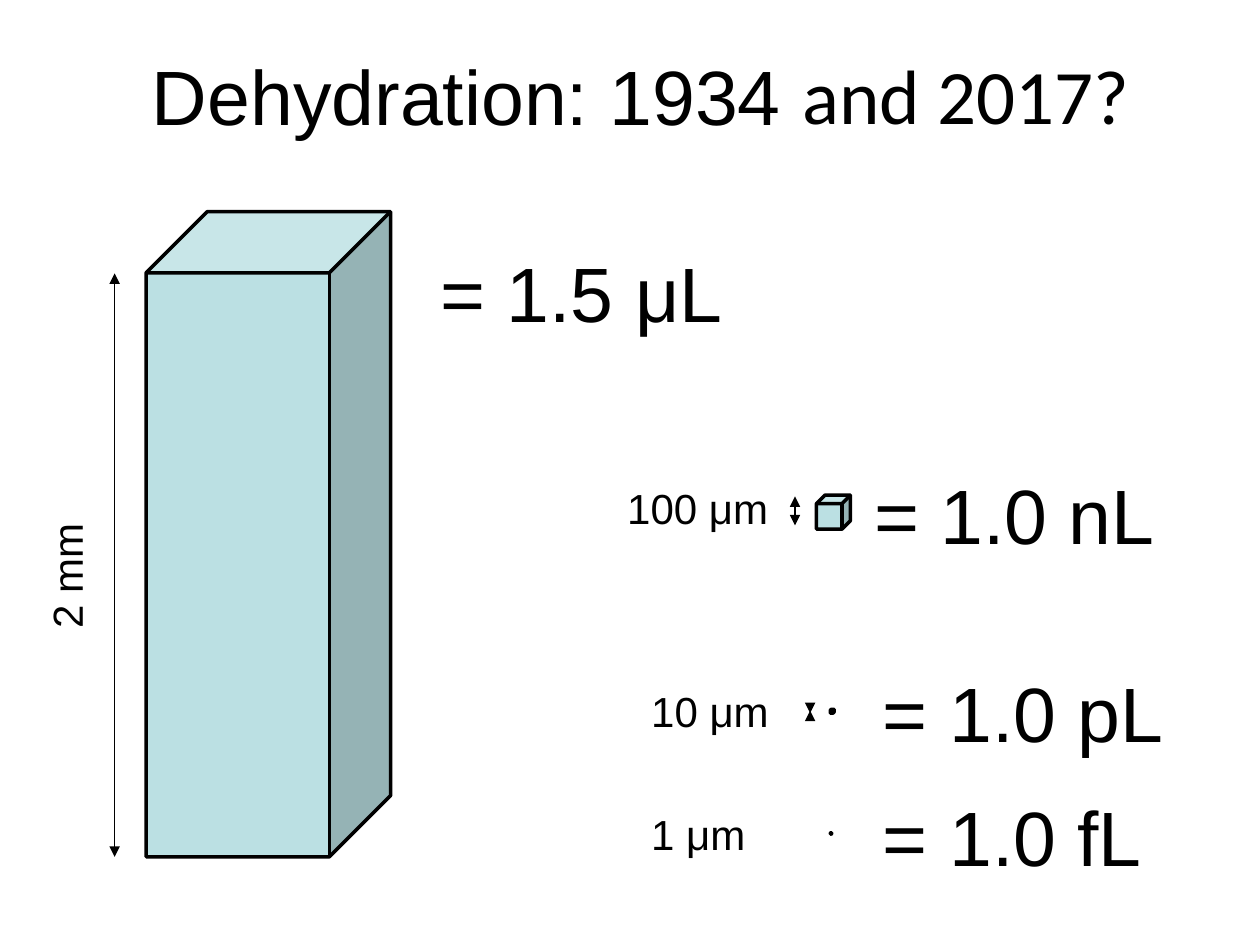
from lxml.etree import SubElement
from pptx import Presentation
from pptx.dml.color import RGBColor
from pptx.enum.shapes import MSO_CONNECTOR, MSO_SHAPE
from pptx.enum.text import MSO_ANCHOR, MSO_AUTO_SIZE, PP_ALIGN
from pptx.oxml.ns import qn
from pptx.util import Inches, Pt

BLACK = RGBColor(0x00, 0x00, 0x00)
PALE_TEAL = RGBColor(0xBB, 0xE0, 0xE3)
LARGE, SMALL = 44, 24

# Titles: text, box, format
TITLES = [
    ("Dehydration: 1934", (-0.01, 0.13, 7.43, 1.25),
     dict(align=PP_ALIGN.CENTER, anchor=MSO_ANCHOR.MIDDLE, wrap=True)),
    ("and 2017?", (6.27, 0.33, 2.82, 0.84), dict(font="Calibri")),
]

# Each volume: cube box, edge label and its box, volume label and its box,
# and the edge arrow as x, bottom, top (None where the edge is too short)
VOLUMES = [
    dict(cube=(1.16, 1.68, 1.94, 5.12), arrow=(0.91, 6.8, 2.17),
         edge=("2 mm", (0.01, 4.31, 1.04, 0.51)), turn=270,
         volume=(" = 1.5 μL", (3.23, 1.9, 2.64, 0.84))),
    dict(cube=(6.48, 3.93, 0.27, 0.27), arrow=(6.31, 4.17, 3.94),
         edge=("100 μm", (4.88, 3.78, 1.33, 0.51)), turn=0,
         volume=(" = 1.0 nL", (6.67, 3.66, 2.62, 0.84))),
    dict(cube=(6.59, 5.63, 0.03, 0.03), arrow=(6.43, 5.66, 5.64),
         edge=("10 μm", (5.07, 5.39, 1.15, 0.5)), turn=0,
         volume=(" = 1.0 pL", (6.74, 5.23, 2.62, 0.84))),
    dict(cube=(6.59, 6.61, 0.01, 0.01), arrow=None,
         edge=("1 μm", (5.07, 6.37, 0.96, 0.5)), turn=0,
         volume=(" = 1.0 fL", (6.74, 6.22, 2.45, 0.84))),
]


def add_text(slide, text, box, size=LARGE, font="Arial", align=PP_ALIGN.LEFT,
             anchor=MSO_ANCHOR.TOP, wrap=False, turn=0):
    label = slide.shapes.add_textbox(*map(Inches, box))
    label.rotation = turn
    frame = label.text_frame
    frame.word_wrap = wrap
    frame.auto_size = MSO_AUTO_SIZE.NONE if wrap else MSO_AUTO_SIZE.SHAPE_TO_FIT_TEXT
    frame.vertical_anchor = anchor
    paragraph = frame.paragraphs[0]
    paragraph.alignment = align
    run = paragraph.add_run()
    run.text = text
    run.font.size = Pt(size)
    run.font.name = font
    run.font.color.rgb = BLACK


def add_cube(slide, box):
    cube = slide.shapes.add_shape(MSO_SHAPE.CUBE, *map(Inches, box))
    cube.shadow.inherit = False
    cube.fill.solid()
    cube.fill.fore_color.rgb = PALE_TEAL
    cube.line.color.rgb = BLACK
    cube.line.width = Pt(2)


def add_edge_arrow(slide, x, bottom, top):
    """Draw a vertical line with an arrowhead at both ends."""
    arrow = slide.shapes.add_connector(
        MSO_CONNECTOR.STRAIGHT, Inches(x), Inches(bottom), Inches(x), Inches(top))
    arrow.line.color.rgb = BLACK
    arrow.line.width = Pt(0.75)
    outline = arrow.line._get_or_add_ln()
    for end in ("a:headEnd", "a:tailEnd"):
        SubElement(outline, qn(end), type="triangle")
    SubElement(arrow._element.spPr, qn("a:effectLst"))


def main():
    deck = Presentation()
    deck.slide_width, deck.slide_height = Inches(10), Inches(7.5)
    slide = deck.slides.add_slide(deck.slide_layouts[6])

    for text, box, style in TITLES:
        add_text(slide, text, box, **style)
    for item in VOLUMES:
        add_cube(slide, item["cube"])
        if item["arrow"]:
            add_edge_arrow(slide, *item["arrow"])
        add_text(slide, *item["edge"], size=SMALL, turn=item["turn"])
        add_text(slide, *item["volume"])

    deck.save("out.pptx")


if __name__ == "__main__":
    main()
